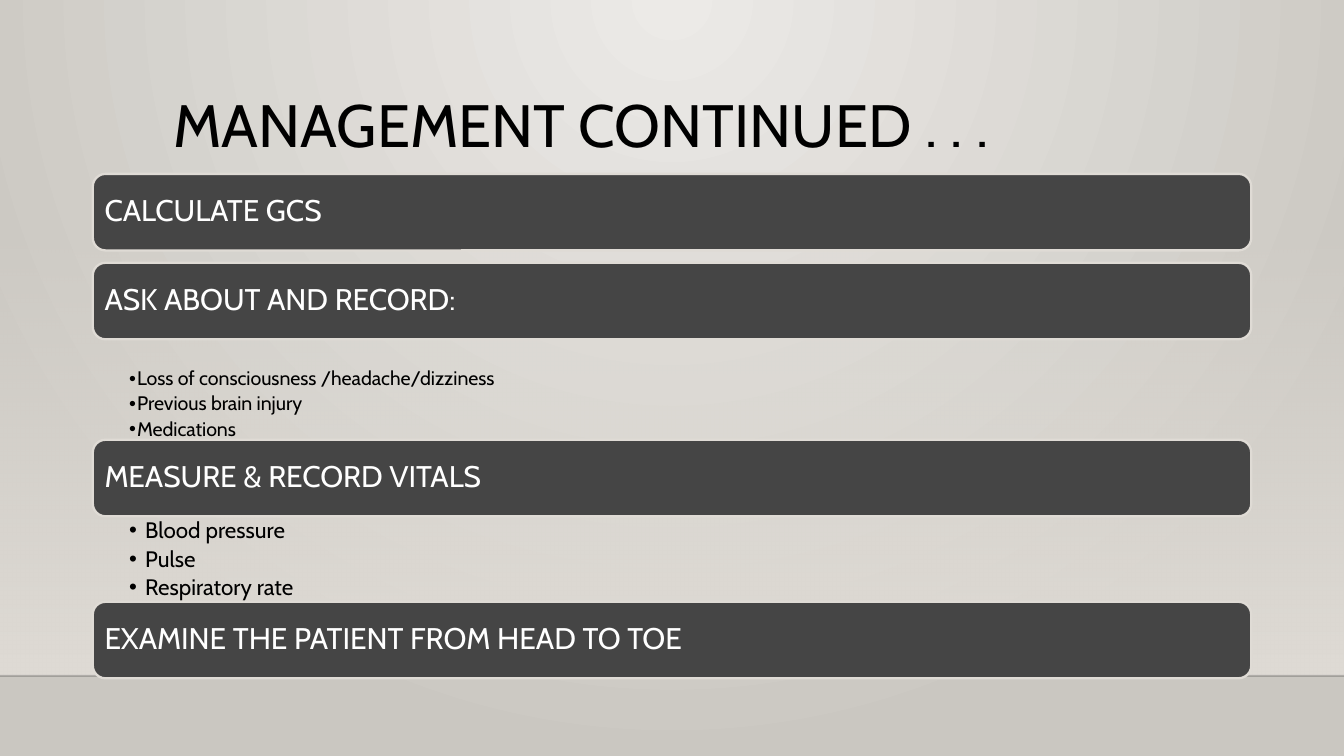
from lxml import etree
from pptx import Presentation, oxml
from pptx import util as u
from pptx.dml.color import RGBColor
from pptx.enum import shapes, text
from pptx.oxml import ns

COLORS = {
    "glow": "ECEAE7", "floor": "CAC7C1", "wall": "DFDBD5",
    "edge": "000001", "bar": "454545", "ink": "000000", "light": "FFFFFF",
}
FONT = "Cabin"
LEFT, WIDTH = 6.9, 86.2
TOP, BAR, GAP = 23, 10.13, 1.63
SECTIONS = [
    ("CALCULATE GCS", None),
    ("ASK ABOUT AND RECORD:", dict(
        items=["Loss of consciousness /headache/dizziness", "Previous brain injury", "Medications"],
        height=13.28, size=10.5, indent=0.06, top_inset=0.22)),
    ("MEASURE & RECORD VITALS", dict(
        items=["Blood pressure", "Pulse", "Respiratory rate"],
        height=11.3, size=12, indent=0.12, top_inset=0.02)),
    ("EXAMINE THE PATIENT FROM HEAD TO TOE", None),
]


def color(name):
    return RGBColor.from_string(COLORS[name])


def add_alpha(color_element, percent):
    etree.SubElement(color_element, ns.qn("a:alpha")).set("val", str(percent * 1000))


class Deck:
    def __init__(self):
        self.presentation = Presentation()
        self.presentation.slide_width = u.Inches(10)
        self.presentation.slide_height = u.Inches(10 * 9 / 16)
        self.slide = self.presentation.slides.add_slide(self.presentation.slide_layouts[3])
        self.title_holder, *self.list_holders = self.slide.placeholders

    def box(self, left, top, width, height):
        across = self.presentation.slide_width / 100
        down = self.presentation.slide_height / 100
        return [int(left * across), int(top * down), int(width * across), int(height * down)]

    def place(self, shape, *area):
        shape.left, shape.top, shape.width, shape.height = self.box(*area)

    def send_back(self, shape, index):
        self.slide.shapes.element.insert(2 + index, shape.element)

    def style(self, paragraph, size, color_name):
        paragraph.alignment = text.PP_ALIGN.LEFT
        paragraph.line_spacing = 0.9
        paragraph.space_before = u.Pt(0)
        paragraph.font.size = u.Pt(size)
        paragraph.font.name = FONT
        paragraph.font.color.rgb = color(color_name)

    def frame(self, shape, anchor, left, top, right, bottom):
        frame = shape.text_frame
        frame.word_wrap = True
        frame.auto_size = text.MSO_AUTO_SIZE.NONE
        frame.vertical_anchor = anchor
        frame.margin_left, frame.margin_top = u.Inches(left), u.Inches(top)
        frame.margin_right, frame.margin_bottom = u.Inches(right), u.Inches(bottom)
        return frame

    def background(self):
        background = oxml.parse_xml(
            f'<p:bg {ns.nsdecls("p", "a")}><p:bgPr><a:gradFill rotWithShape="1"><a:gsLst>'
            f'<a:gs pos="0"><a:srgbClr val="{COLORS["glow"]}"/></a:gs>'
            f'<a:gs pos="100000"><a:srgbClr val="{COLORS["floor"]}"/></a:gs></a:gsLst>'
            '<a:path path="circle"><a:fillToRect l="43000" t="0" r="43000" b="100000"/></a:path>'
            '</a:gradFill><a:effectLst/></p:bgPr></p:bg>')
        self.slide.element.cSld.insert(0, background)

    def wall(self, top, bottom):
        area = self.box(0, top, 100, bottom - top)
        shape = self.slide.shapes.add_shape(shapes.MSO_SHAPE.RECTANGLE, *area)
        shape.shadow.inherit = False
        shape.line.fill.background()
        shape.fill.gradient()
        shape.fill.gradient_angle = 270
        for stop, position in zip(shape.fill.gradient_stops, (0, 1)):
            stop.position = position
            stop.color.rgb = color("wall")
        add_alpha(next(shape.element.spPr.iter(ns.qn("a:srgbClr"))), 0)
        self.send_back(shape, 0)

    def floor_edge(self, top):
        left, y, width, _ = self.box(0, top, 100, 0)
        line = self.slide.shapes.add_connector(
            shapes.MSO_CONNECTOR.STRAIGHT, left, y, left + width, y)
        line.line.width = u.Pt(1)
        line.line.color.rgb = color("edge")
        properties = line.element.spPr
        add_alpha(next(properties.iter(ns.qn("a:srgbClr"))), 20)
        etree.SubElement(properties, ns.qn("a:effectLst"))
        self.send_back(line, 1)

    def title(self, words, *area):
        self.place(self.title_holder, *area)
        frame = self.frame(self.title_holder, text.MSO_ANCHOR.TOP, 0.1, 0.05, 0.1, 0.05)
        frame.text = words
        self.style(frame.paragraphs[0], 32, "ink")

    def bar(self, words, top):
        area = self.box(LEFT, top, WIDTH, BAR)
        shape = self.slide.shapes.add_shape(shapes.MSO_SHAPE.ROUNDED_RECTANGLE, *area)
        shape.shadow.inherit = False
        shape.fill.solid()
        shape.fill.fore_color.rgb = color("bar")
        shape.line.color.rgb = color("wall")
        shape.line.width = u.Pt(1.25)
        frame = self.frame(shape, text.MSO_ANCHOR.MIDDLE, 0.06, 0.07, 0.07, 0.07)
        frame.text = words
        self.style(frame.paragraphs[0], 16, "light")

    def bullets(self, top, items, height, size, indent, top_inset):
        holder = self.list_holders.pop(0)
        self.place(holder, LEFT, top, WIDTH, height)
        frame = self.frame(holder, text.MSO_ANCHOR.TOP, 0.27, top_inset, 0.09, 0.02)
        frame.text = "\n".join(items)
        for paragraph in frame.paragraphs:
            properties = paragraph._p.get_or_add_pPr()
            properties.set("marL", str(u.Inches(indent)))
            properties.set("indent", str(-u.Inches(indent)))
            etree.SubElement(properties, ns.qn("a:buChar")).set("char", "•")
            self.style(paragraph, size, "ink")
            paragraph.space_after = u.Pt(size * 0.2)


def main():
    deck = Deck()
    deck.background()
    deck.wall(29.5, 89.4)
    deck.floor_edge(89.4)
    deck.title("MANAGEMENT CONTINUED . . .", 11.9, 11.8, 78.8, 15.3)
    top = TOP
    for heading, details in SECTIONS:
        deck.bar(heading, top)
        top += BAR
        if details:
            deck.bullets(top, **details)
            top += details["height"]
        else:
            top += GAP
    deck.presentation.save("out.pptx")


if __name__ == "__main__":
    main()
